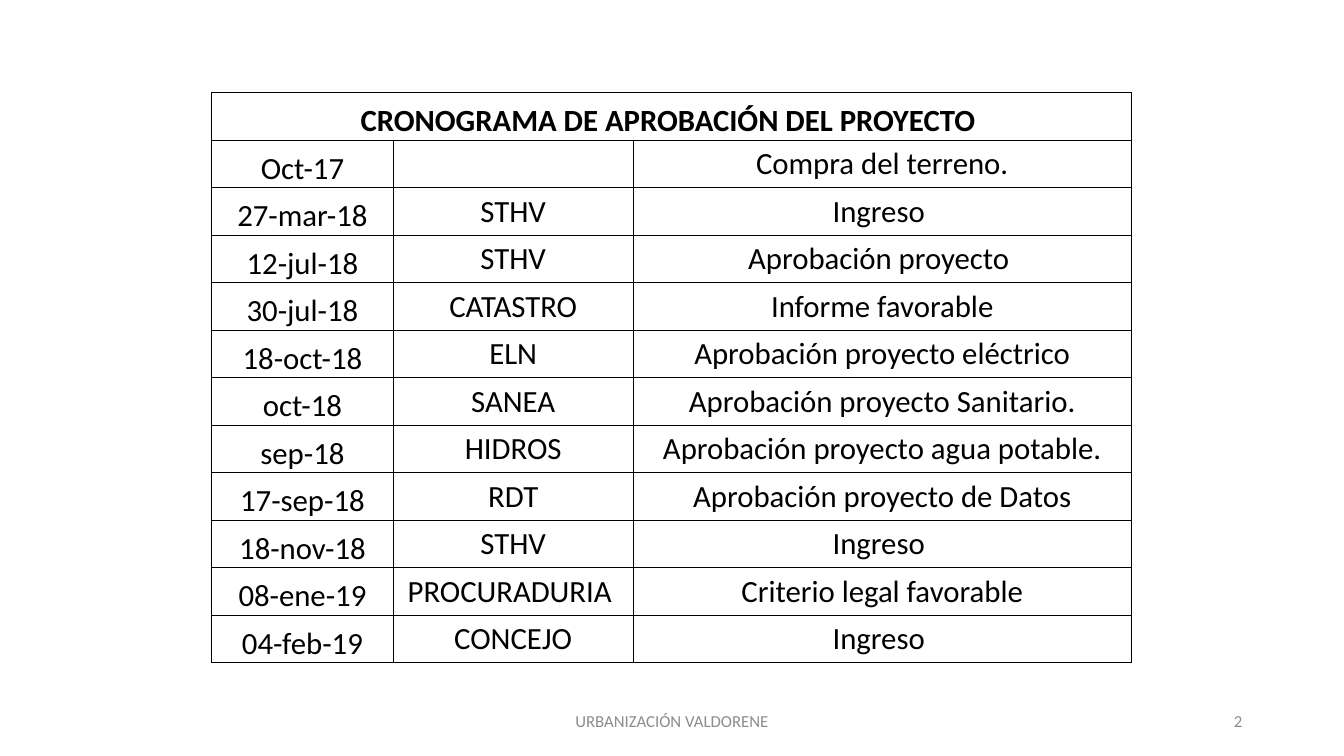
from dataclasses import dataclass

from lxml.etree import SubElement
from pptx import Presentation
from pptx.dml.color import RGBColor
from pptx.enum.text import MSO_ANCHOR as Anchor, PP_ALIGN as Align
from pptx.oxml.ns import qn
from pptx.util import Inches, Pt


@dataclass(frozen=True)
class Theme:
    font: str = "Calibri"
    ink: str = "000000"
    muted: str = "8C8C8C"
    table_size: int = 22
    footer_size: int = 12
    border: float = 0.5


THEME = Theme()
WIDTH, HEIGHT = 13.33, 7.5

# Schedule geometry, in inches
LEFT, TOP = 2.1, 0.92
COLUMNS = (1.8, 2.38, 4.94)
ROW_HEIGHT = 0.471
CELL_INSET = 0.01

HEADING = "CRONOGRAMA DE APROBACIÓN DEL PROYECTO "
MILESTONES = (
    ("Oct-17", "", "Compra del terreno."),
    ("27-mar-18", "STHV", "Ingreso "),
    ("12-jul-18", "STHV", "Aprobación proyecto "),
    ("30-jul-18", "CATASTRO", "Informe favorable"),
    ("18-oct-18", "ELN", "Aprobación proyecto eléctrico"),
    ("oct-18", "SANEA", "Aprobación proyecto Sanitario."),
    ("sep-18", "HIDROS", "Aprobación proyecto agua potable."),
    ("17-sep-18", "RDT", "Aprobación proyecto de Datos"),
    ("18-nov-18", "STHV", "Ingreso "),
    ("08-ene-19", "PROCURADURIA ", "Criterio legal favorable"),
    ("04-feb-19", "CONCEJO", "Ingreso "),
)


def write(frame, text, *, size, color, bold=False, align=Align.CENTER):
    """Fill a text frame with one formatted paragraph."""
    paragraph = frame.paragraphs[0]
    paragraph.alignment = align
    if not text:
        return
    run = paragraph.add_run()
    run.text = text
    run.font.name = THEME.font
    run.font.size = Pt(size)
    run.font.bold = bold
    run.font.color.rgb = RGBColor.from_string(color)


def add_borders(cell):
    properties = cell._tc.get_or_add_tcPr()
    for side in ("lnL", "lnR", "lnT", "lnB"):
        line = SubElement(properties, qn(f"a:{side}"), w=str(Pt(THEME.border)))
        fill = SubElement(line, qn("a:solidFill"))
        SubElement(fill, qn("a:srgbClr"), val=THEME.ink)


def format_cell(cell, anchor):
    cell.vertical_anchor = anchor
    cell.margin_left = cell.margin_right = cell.margin_top = Inches(CELL_INSET)
    cell.margin_bottom = 0
    add_borders(cell)
    cell.fill.background()


def add_schedule(slide):
    rows = ((HEADING, "", ""),) + MILESTONES
    schedule = slide.shapes.add_table(
        len(rows), len(COLUMNS), Inches(LEFT), Inches(TOP),
        Inches(sum(COLUMNS)), Inches(ROW_HEIGHT * len(rows))).table
    schedule.first_row = schedule.horz_banding = False
    for column, width in zip(schedule.columns, COLUMNS):
        column.width = Inches(width)

    for r, values in enumerate(rows):
        schedule.rows[r].height = Inches(ROW_HEIGHT)
        for c, value in enumerate(values):
            cell = schedule.cell(r, c)
            # Dates and the heading sit on the bottom edge
            format_cell(cell, Anchor.BOTTOM if c == 0 else Anchor.MIDDLE)
            write(cell.text_frame, value, size=THEME.table_size,
                  color=THEME.ink, bold=r == 0)
    schedule.cell(0, 0).merge(schedule.cell(0, len(COLUMNS) - 1))


def add_footer(slide, text, left, width, align):
    footer = slide.shapes.add_textbox(
        Inches(left), Inches(6.95), Inches(width), Inches(0.4))
    frame = footer.text_frame
    frame.word_wrap = True
    frame.vertical_anchor = Anchor.MIDDLE
    write(frame, text, size=THEME.footer_size, color=THEME.muted, align=align)


def main():
    deck = Presentation()
    deck.slide_width, deck.slide_height = Inches(WIDTH), Inches(HEIGHT)
    slide = deck.slides.add_slide(deck.slide_layouts[6])

    add_schedule(slide)

    # Footer and page number
    add_footer(slide, "URBANIZACIÓN VALDORENE", (WIDTH - 4.5) / 2, 4.5, Align.CENTER)
    add_footer(slide, "2", 9.42, 3, Align.RIGHT)

    deck.save("out.pptx")


if __name__ == "__main__":
    main()
